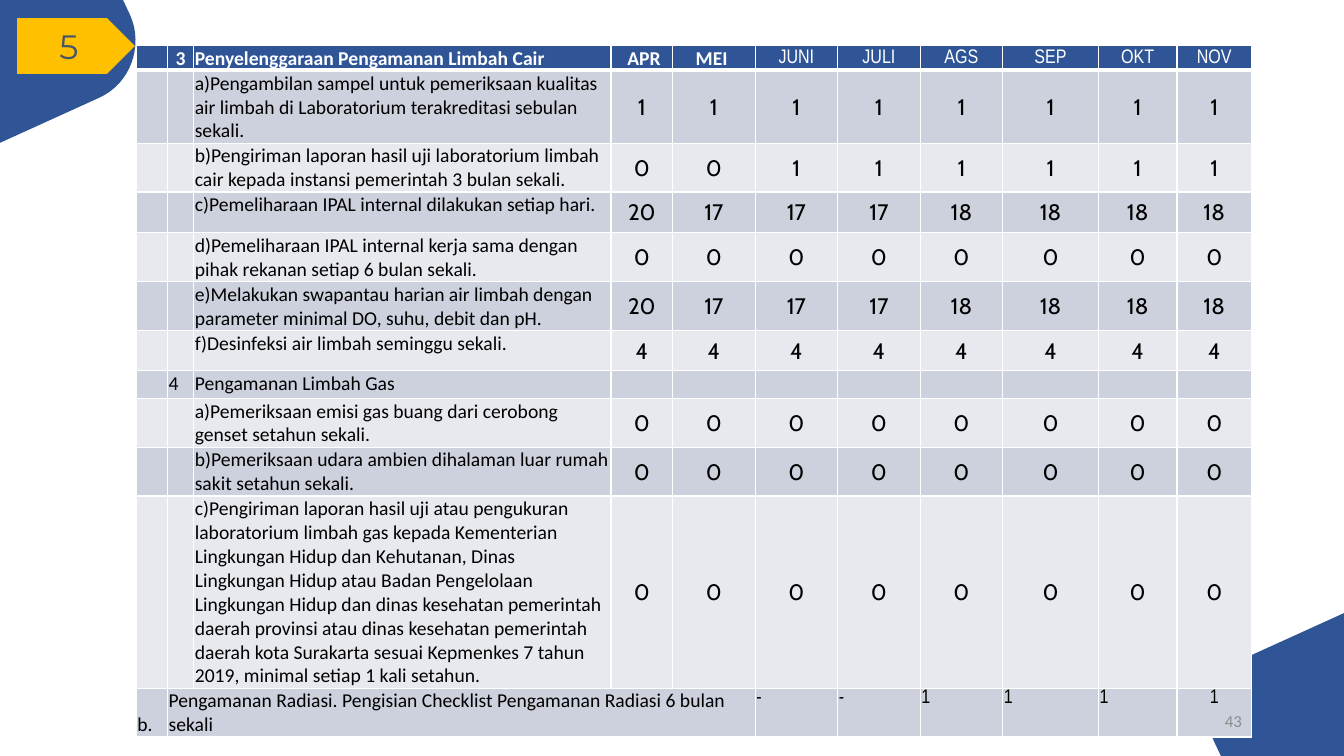
import pptx
import pptx.util
import pptx.dml.color
import pptx.enum.shapes
import pptx.enum.text
import lxml.etree

Cm, Pt = pptx.util.Cm, pptx.util.Pt
ALIGN, ANCHOR = pptx.enum.text.PP_ALIGN, pptx.enum.text.MSO_ANCHOR
COLORS = {
    "blue": "2F5597", "gold": "FFC000", "slate": "44546A", "white": "FFFFFF",
    "black": "000000", "gray": "8C8C8C", "dark": "CDD1DD", "light": "E8E9EF",
}
NS = "http://schemas.openxmlformats.org/drawingml/2006/main"


def rgb(name):
    return pptx.dml.color.RGBColor.from_string(COLORS[name])


def write(frame, text, size, font, color, align, bold=False):
    para = frame.paragraphs[0]
    para.alignment = align
    run = para.add_run()
    run.text = text
    run.font.size, run.font.name, run.font.bold = Pt(size), font, bold
    run.font.color.rgb = rgb(color)


deck = pptx.Presentation()
deck.slide_width, deck.slide_height = Cm(33.87), Cm(19.05)
slide = deck.slides.add_slide(deck.slide_layouts[6])
shapes = slide.shapes

# Corner shapes: the lower right one is the upper left one turned by 180 degrees
bend = [(3.28, 0.38), (3.63, 1.17), (3.28, 2.11), (2.51, 2.46)]
edge = [(0, 0), (3.1, 0)]
for step in range(17):
    t = step / 16
    parts = [(1 - t) ** 3, 3 * t * (1 - t) ** 2, 3 * t * t * (1 - t), t ** 3]
    edge.append(tuple(sum(w * p[axis] for w, p in zip(parts, bend)) for axis in (0, 1)))
edge.append((0, 3.6))

for turned in (True, False):
    points = [(33.87 - x, 19.05 - y) if turned else (x, y) for x, y in edge]
    points = [(Cm(x), Cm(y)) for x, y in points]
    pen = shapes.build_freeform(*points[0])
    pen.add_line_segments(points[1:], close=True)
    corner = pen.convert_to_shape()
    corner.shadow.inherit = False
    corner.fill.solid()
    corner.fill.fore_color.rgb = rgb("blue")
    corner.line.fill.background()

# Section number tag
tag = shapes.add_shape(pptx.enum.shapes.MSO_SHAPE.PENTAGON,
                       Cm(0.43), Cm(0.46), Cm(2.97), Cm(1.4))
tag.shadow.inherit = False
tag.fill.solid()
tag.fill.fore_color.rgb = rgb("gold")
tag.line.fill.background()
tag.text_frame.vertical_anchor = ANCHOR.MIDDLE
write(tag.text_frame, "5", 24.1, "Montserrat", "slate", ALIGN.CENTER)

# Table content: letter, number, task, then one value a month
daily = ["20"] + ["17"] * 3 + ["18"] * 4
zeros = ["0"] * 8
rows = [
    ["", "3", "Penyelenggaraan Pengamanan Limbah Cair",
     " APR", "MEI ", "JUNI", "JULI", "AGS", "SEP", "OKT", "NOV"],
    ["", "", "a)Pengambilan sampel untuk pemeriksaan kualitas air limbah di "
     "Laboratorium terakreditasi sebulan sekali."] + ["1"] * 8,
    ["", "", "b)Pengiriman laporan hasil uji laboratorium limbah cair kepada "
     "instansi pemerintah 3 bulan sekali."] + ["0"] * 2 + ["1"] * 6,
    ["", "", "c)Pemeliharaan IPAL internal dilakukan setiap hari."] + daily,
    ["", "", "d)Pemeliharaan IPAL internal kerja sama dengan pihak rekanan "
     "setiap 6 bulan sekali."] + zeros,
    ["", "", "e)Melakukan swapantau harian air limbah dengan parameter minimal "
     "DO, suhu, debit dan pH."] + daily,
    ["", "", "f)Desinfeksi air limbah seminggu sekali."] + ["4"] * 8,
    ["", "4", "Pengamanan Limbah Gas"] + [""] * 8,
    ["", "", "a)Pemeriksaan emisi gas buang dari cerobong genset setahun sekali."] + zeros,
    ["", "", "b)Pemeriksaan udara ambien dihalaman luar rumah sakit setahun sekali."] + zeros,
    ["", "", "c)Pengiriman laporan hasil uji atau pengukuran laboratorium limbah gas "
     "kepada Kementerian Lingkungan Hidup dan Kehutanan, Dinas Lingkungan Hidup atau "
     "Badan Pengelolaan Lingkungan Hidup dan dinas kesehatan pemerintah daerah provinsi "
     "atau dinas kesehatan pemerintah daerah kota Surakarta sesuai Kepmenkes 7 tahun "
     "2019, minimal setiap 1 kali setahun."] + zeros,
    ["b.", "Pengamanan Radiasi. Pengisian Checklist Pengamanan Radiasi 6 bulan sekali",
     "", "", "", "-", "-", "1", "1", "1", "1"],
]
widths = [0.79, 0.66, 10.52, 1.55] + [2.08] * 4 + [2.41, 1.98, 1.88]
heights = [0.43, 1.52, 1.09, 1.02, 1.09, 1.09, 1.02, 0.69, 1.09, 1.09, 3.99, 0.69]
last = len(rows) - 1

table = shapes.add_table(len(rows), len(widths),
                         Cm(3.43), Cm(1.14), Cm(28.12), Cm(17.22)).table
for col, width in zip(table.columns, widths):
    col.width = Cm(width)
for row, height in zip(table.rows, heights):
    row.height = Cm(height)
table.cell(last, 1).merge(table.cell(last, 4))

# Table cells
for r, row in enumerate(rows):
    for c, text in enumerate(row):
        cell = table.cell(r, c)
        cell.margin_left = cell.margin_right = cell.margin_top = Cm(0.03)
        cell.margin_bottom = 0

        # White borders, thick below the header
        props = cell._tc.get_or_add_tcPr()
        for side in "LRTB":
            thick = (r, side) in ((0, "B"), (1, "T"))
            line = lxml.etree.SubElement(props, f"{{{NS}}}ln{side}", w=str(Pt(3 if thick else 1)))
            fill = lxml.etree.SubElement(line, f"{{{NS}}}solidFill")
            lxml.etree.SubElement(fill, f"{{{NS}}}srgbClr", val=COLORS["white"])
        cell.fill.solid()
        cell.fill.fore_color.rgb = rgb("blue" if r == 0 else "dark" if r % 2 else "light")

        # An empty cell keeps a small type size so that its row stays low
        if not text:
            para = cell.text_frame.paragraphs[0]
            lxml.etree.SubElement(para._p, f"{{{NS}}}endParaRPr", sz="1400")
            continue

        month = c > 2
        size, font, align = 14, "Calibri", ALIGN.LEFT
        if r == 0:
            font = "Arial Narrow" if c > 4 else font
            align = ALIGN.LEFT if c == 2 else ALIGN.CENTER
        elif r == last:
            font = "Arial Narrow" if month else font
            align = ALIGN.CENTER if c == 10 else align
        elif month:
            size, font, align = 16, "Cabin", ALIGN.CENTER
        if month and r < last:
            cell.vertical_anchor = ANCHOR.MIDDLE
        elif (r, c) == (last, 0):
            cell.vertical_anchor = ANCHOR.BOTTOM
        write(cell.text_frame, text, size, font, "white" if r == 0 else "black",
              align, r == 0 and c < 5)

# Page number
page = shapes.add_textbox(Cm(23.93), Cm(17.65), Cm(7.62), Cm(1.02)).text_frame
page.word_wrap = True
page.vertical_anchor = ANCHOR.MIDDLE
write(page, "43", 12, "Calibri", "gray", ALIGN.RIGHT)

deck.save("out.pptx")
